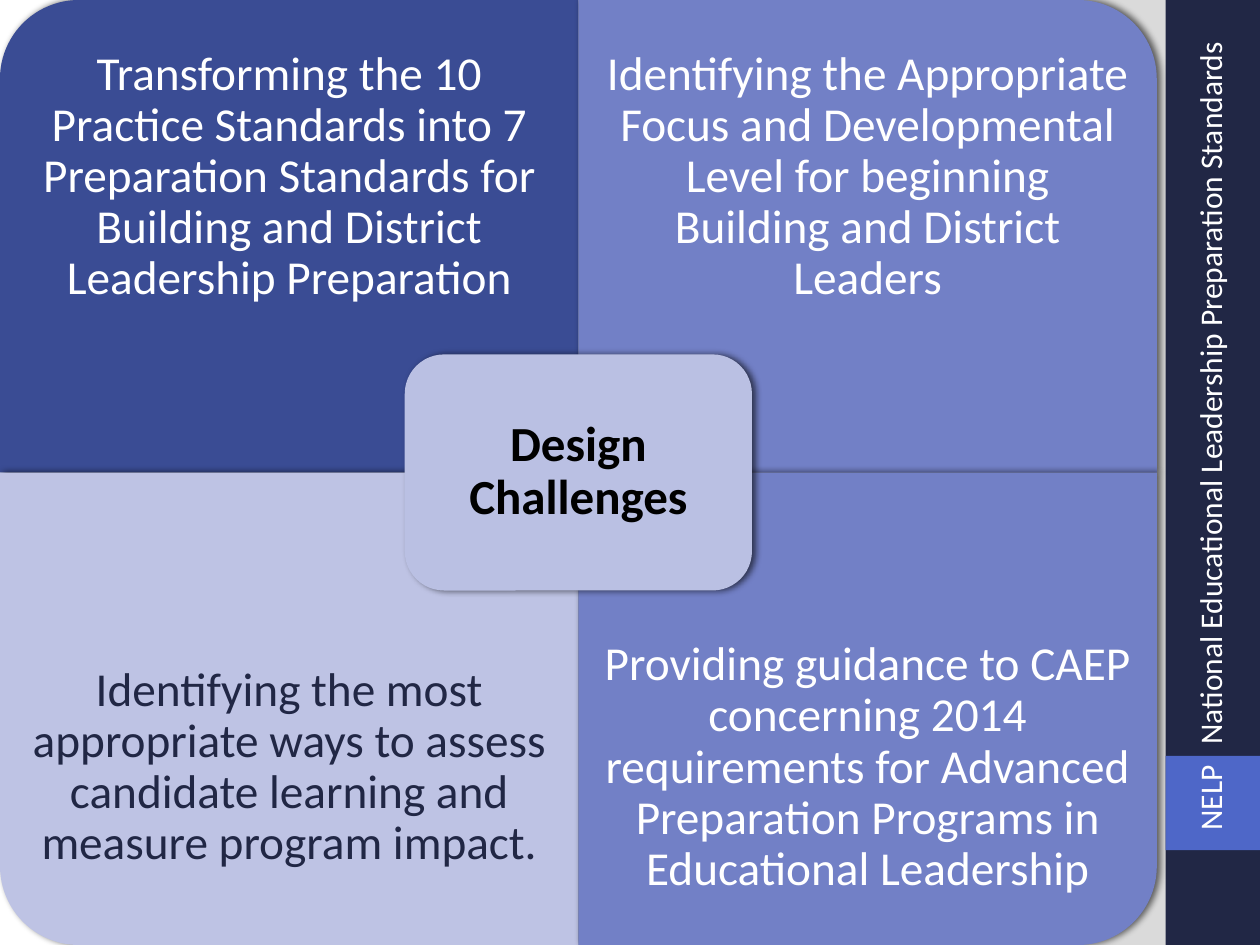
from lxml import etree
from pptx import Presentation
from pptx.dml.color import RGBColor
from pptx.enum.shapes import MSO_SHAPE
from pptx.enum.text import MSO_ANCHOR, MSO_AUTO_SIZE, PP_ALIGN
from pptx.oxml import parse_xml
from pptx.oxml.ns import nsdecls, qn
from pptx.util import Cm, Pt

RECT = MSO_SHAPE.RECTANGLE
ROUND = MSO_SHAPE.ROUNDED_RECTANGLE
CORNER = MSO_SHAPE.ROUND_1_RECTANGLE
MIDDLE = MSO_ANCHOR.MIDDLE
CENTER = PP_ALIGN.CENTER
GROW = MSO_AUTO_SIZE.SHAPE_TO_FIT_TEXT

NAVY = RGBColor(0x21, 0x27, 0x45)
BLUE = RGBColor(0x4E, 0x67, 0xC8)
DARK = RGBColor(0x3A, 0x4C, 0x94)
MID = RGBColor(0x72, 0x80, 0xC6)
PALE = RGBColor(0xBE, 0xC3, 0xE4)
HUB = RGBColor(0xBA, 0xC0, 0xE3)
WHITE = RGBColor(0xFF, 0xFF, 0xFF)
BLACK = RGBColor(0, 0, 0)

WIDE, HIGH = 25.4, 19.05
BAR = 1.9
TILE_W, TILE_H = 11.66, HIGH / 2
TEXT_H = TILE_H * 0.75
HUB_W, HUB_H = 7, 4.76

SHADOW = f"""<a:effectLst {nsdecls('a')}>
<a:outerShdw blurRad="50800" dist="25400" dir="0" rotWithShape="0">
<a:srgbClr val="000000"><a:alpha val="60000"/></a:srgbClr>
</a:outerShdw></a:effectLst>"""
GLOW = f"""<a:gradFill {nsdecls('a')} rotWithShape="1"><a:gsLst>
<a:gs pos="0"><a:srgbClr val="FFFFFF"/></a:gs>
<a:gs pos="75000"><a:srgbClr val="FFFFFF"/></a:gs>
<a:gs pos="100000"><a:srgbClr val="DADADA"/></a:gs>
</a:gsLst><a:path path="circle">
<a:fillToRect l="20000" t="50000" r="100000" b="50000"/>
</a:path></a:gradFill>"""


def add_block(kind, left, top, width, height, color, shade=False):
    block = slide.shapes.add_shape(kind, Cm(left), Cm(top), Cm(width), Cm(height))
    block.shadow.inherit = False
    block.fill.solid()
    block.fill.fore_color.rgb = color
    block.line.fill.background()
    if shade:
        props = block.element.spPr
        props.replace(props.find(qn("a:effectLst")), parse_xml(SHADOW))
    return block


def write_text(shape, words, size, color, bold=False):
    """Fill the shape with one centred, wrapped paragraph."""
    frame = shape.text_frame
    frame.text = words
    frame.word_wrap = True
    frame.vertical_anchor = MIDDLE
    frame.margin_left = frame.margin_right = Cm(0.53)
    frame.margin_top = frame.margin_bottom = Cm(0.53)
    para = frame.paragraphs[0]
    para.alignment = CENTER
    para.line_spacing = 0.9
    font = para.runs[0].font
    font.name, font.size, font.bold = "Calibri", Pt(size), bold
    font.color.rgb = color


prs = Presentation()
prs.slide_width, prs.slide_height = Cm(WIDE), Cm(HIGH)
slide = prs.slides.add_slide(prs.slide_layouts[6])

# Background
slide.background.fill.gradient()
grad = next(slide.element.iter(qn("a:gradFill")))
grad.getparent().replace(grad, parse_xml(GLOW))

# Side bar
add_block(RECT, WIDE - BAR, 0, BAR, HIGH, NAVY)
add_block(RECT, WIDE - BAR, 15.24, BAR, BAR, BLUE)

# Four tiles, each turned so its round corner points outward
tiles = [
    (0, 0, 270, DARK, WHITE, "Transforming the 10 Practice Standards into 7 Preparation "
     "Standards for Building and District Leadership Preparation"),
    (1, 0, 0, MID, WHITE, "Identifying the Appropriate Focus and Developmental Level "
     "for beginning Building and District Leaders"),
    (0, 1, 180, PALE, NAVY, "Identifying the most appropriate ways to assess candidate "
     "learning and measure program impact."),
    (1, 1, 90, MID, WHITE, "Providing guidance to CAEP concerning 2014 requirements for "
     "Advanced Preparation Programs in Educational Leadership"),
]
for col, row, turn, fill, ink, words in tiles:
    left, top = col * TILE_W, row * TILE_H
    width, height = (TILE_H, TILE_W) if turn % 180 else (TILE_W, TILE_H)
    tile = add_block(CORNER, left + (TILE_W - width) / 2, top + (TILE_H - height) / 2,
                     width, height, fill, shade=True)
    tile.rotation = turn
    label = slide.shapes.add_textbox(Cm(left), Cm(row * (HIGH - TEXT_H)),
                                     Cm(TILE_W), Cm(TEXT_H))
    write_text(label, words, 27, ink)

# Centre
hub = add_block(ROUND, TILE_W - HUB_W / 2, TILE_H - HUB_H / 2, HUB_W, HUB_H, HUB, shade=True)
write_text(hub, "Design Challenges", 28, BLACK, bold=True)

# Upright title on the side bar, with a tab stop after the short name
title = slide.shapes.add_textbox(Cm(23.88), Cm(0.61), Cm(1.27), Cm(16.38))
frame = title.text_frame
frame.text = "NELP\tNational Educational Leadership Preparation Standards"
frame.word_wrap = False
frame.auto_size = GROW
frame._txBody.bodyPr.set("vert", "vert270")
para = frame.paragraphs[0]
tabs = etree.SubElement(para._p.get_or_add_pPr(), qn("a:tabLst"))
etree.SubElement(tabs, qn("a:tab"), pos=str(Cm(1.73)), algn="l")
font = para.runs[0].font
font.name, font.size = "Calibri", Pt(18)
font.color.rgb = WHITE

prs.save("out.pptx")
